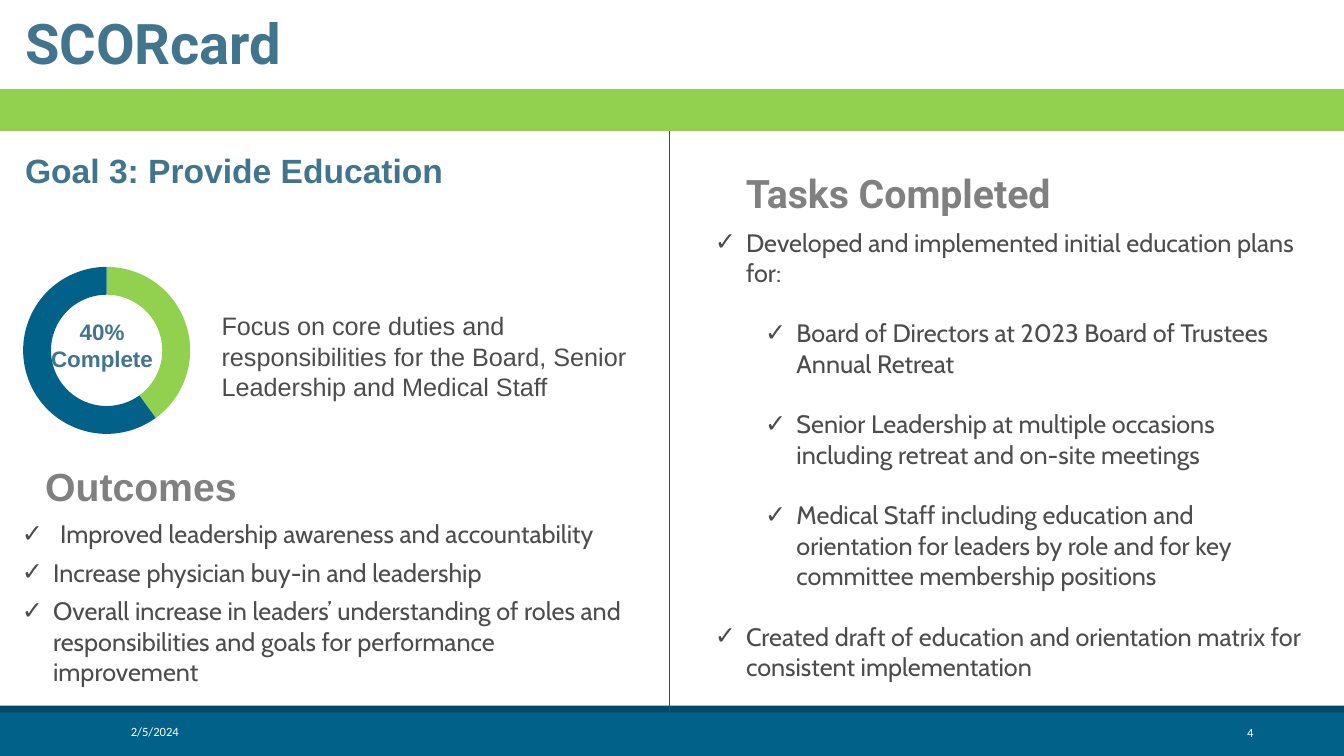
from lxml.etree import SubElement
from pptx import Presentation
from pptx.chart.data import CategoryChartData
from pptx.dml.color import RGBColor
from pptx.enum.chart import XL_CHART_TYPE
from pptx.enum.shapes import MSO_CONNECTOR, MSO_SHAPE
from pptx.enum.text import MSO_ANCHOR, MSO_AUTO_SIZE, PP_ALIGN
from pptx.oxml import parse_xml
from pptx.oxml.ns import nsdecls, qn
from pptx.util import Inches, Pt

COLOURS = {
    "white": "FFFFFF", "blue": "016188", "navy": "014A67", "green": "92D050",
    "steel": "41748D", "grey": "808080", "text": "4C4C4C",
    "slice 1": "767676", "slice 2": "BABABA", "slice 3": "969696", "slice 4": "535353",
}
COLUMNS, ROWS = 160, 90
INDENT = 0.31


def colour(name):
    return RGBColor.from_string(COLOURS[name])


class Board:
    """Holds the grid, the style and the current slide."""

    def __init__(self, deck, layout):
        self.column = deck.slide_width / COLUMNS
        self.row = deck.slide_height / ROWS
        self.page = deck.slides.add_slide(deck.slide_layouts[layout])
        self.shapes = self.page.shapes

    def cell(self, left, top, width, height):
        return (round(left * self.column), round(top * self.row),
                round(width * self.column), round(height * self.row))

    def place(self, holder, area):
        holder.left, holder.top, holder.width, holder.height = self.cell(*area)

    def style(self, para, font, size, shade, bold=False):
        for span in para.runs:
            span.font.name, span.font.size, span.font.bold = font, Pt(size), bold
            span.font.color.rgb = colour(shade)

    def bar(self, top, height, shade):
        bar = self.shapes.add_shape(MSO_SHAPE.RECTANGLE, *self.cell(0, top, COLUMNS, height))
        bar.shadow.inherit = False
        bar.fill.solid()
        bar.fill.fore_color.rgb = colour(shade)
        bar.line.fill.background()

    def fill_text(self, box, words, font, size, shade, bold=False,
                  align=PP_ALIGN.LEFT, anchor=MSO_ANCHOR.TOP):
        frame = box.text_frame
        frame.word_wrap, frame.auto_size = True, MSO_AUTO_SIZE.NONE
        frame.vertical_anchor = anchor
        frame.text = words
        for para in frame.paragraphs:
            para.alignment = align
            self.style(para, font, size, shade, bold)

    def text(self, area, words, *look, **options):
        self.fill_text(self.shapes.add_textbox(*self.cell(*area)), words, *look, **options)

    def title(self, area, words, *look, **options):
        self.place(self.shapes.title, area)
        self.fill_text(self.shapes.title, words, *look, **options)

    def checklist(self, index, area, items):
        """Each item is (words, level, hanging inches, points before)."""
        holder = self.page.placeholders[index]
        self.place(holder, area)
        self.fill_text(holder, "\n".join(item[0] for item in items), "Cabin", 18, "text")
        for para, (_, level, hanging, before) in zip(holder.text_frame.paragraphs, items):
            para.level = level
            para.space_before, para.space_after = Pt(before), Pt(0)
            properties = para._p.get_or_add_pPr()
            properties.set("marL", str(Inches(level * 0.5 + hanging)))
            properties.set("indent", str(-Inches(hanging)))
            SubElement(properties, qn("a:buFont")).set("typeface", "Arial")
            SubElement(properties, qn("a:buChar")).set("char", "✓")

    def doughnut(self, area, series, plot):
        data = CategoryChartData()
        data.categories = ["1", "2", "3", "4"]
        for name, values, _ in series:
            data.add_series(name, values)
        chart = self.shapes.add_chart(XL_CHART_TYPE.DOUGHNUT, *self.cell(*area), data).chart
        chart.has_legend = chart.has_title = False
        chart.font.name, chart.font.size = "Calibri", Pt(10)
        chart.font.color.rgb = colour("text")
        chart.plots[0].vary_by_categories = True
        for ring, (_, _, shades) in zip(chart.plots[0].series, series):
            for index, shade in enumerate(shades):
                look = ring.points[index].format
                look.fill.solid()
                look.fill.fore_color.rgb = colour(shade)
                look.line.fill.background()
        # Fixed place of the ring inside the chart
        plot_area = chart._chartSpace.chart.plotArea
        for layout in plot_area.findall(qn("c:layout")):
            plot_area.remove(layout)
        sides = "".join(f'<c:{key} val="{share}"/>' for key, share in zip("xywh", plot))
        plot_area.insert(0, parse_xml(
            f'<c:layout {nsdecls("c")}><c:manualLayout><c:layoutTarget val="inner"/>'
            f'<c:xMode val="edge"/><c:yMode val="edge"/>{sides}</c:manualLayout></c:layout>'))

    def divider(self, column, top, bottom):
        left, start, _, height = self.cell(column, top, 0, bottom - top)
        line = self.shapes.add_connector(MSO_CONNECTOR.STRAIGHT, left, start + height, left, start)
        line.line.color.rgb, line.line.width = colour("blue"), Pt(1)
        SubElement(line._element.spPr, qn("a:effectLst"))


def main():
    deck = Presentation()
    deck.slide_width, deck.slide_height = Inches(13.333), Inches(7.5)
    board = Board(deck, 3)

    # Header and footer bands
    board.bar(84.7, 5.3, "blue")
    board.bar(84, 0.8, "navy")
    board.bar(10.6, 5, "green")
    board.text((14.4, 84.7, 32.4, 4.8), "2/5/2024", "Calibri", 9, "white",
               anchor=MSO_ANCHOR.MIDDLE)
    board.text((126.2, 85.7, 24.2, 3), "4", "Calibri", 9, "white",
               align=PP_ALIGN.RIGHT, anchor=MSO_ANCHOR.MIDDLE)

    # Titles and headings
    board.title((1.8, 0.4, 60, 9.2), "SCORcard", "Roboto", 40, "steel", True)
    board.text((1.8, 17.2, 67.7, 6), "Goal 3: Provide Education", "Arial", 24, "steel", True)
    board.text((4.2, 54.5, 62.2, 6.8), "Outcomes", "Arial", 28, "grey", True)
    board.text((87.6, 19.6, 50, 6.8), "Tasks Completed", "Roboto", 28, "grey", True)

    # Progress ring and focus
    others = ["slice 3", "slice 4"]
    board.doughnut((1.4, 29.3, 22.6, 23), [
        ("Series 1", (0, 0, None, None), ["slice 1", "slice 2"] + others),
        ("Series 2", (40, 60, None, None), ["green", "blue"] + others),
    ], (0.06, 0.1, 0.88, 0.92))
    board.text((3.2, 37.2, 17.9, 7.7), "40%\nComplete", "Arial", 16, "steel", True,
               align=PP_ALIGN.CENTER, anchor=MSO_ANCHOR.MIDDLE)
    board.text((25.2, 36.4, 51.6, 12.1),
               "Focus on core duties and responsibilities for the Board, "
               "Senior Leadership and Medical Staff", "Arial", 18, "text")

    # Outcomes and tasks
    board.checklist(1, (1.4, 61.1, 74.8, 21.4), [
        ("Improved leadership awareness and accountability", 0, 0.38, 0),
        ("Increase physician buy-in and leadership", 0, INDENT, 6),
        ("Overall increase in leaders’ understanding of roles and responsibilities "
         "and goals for performance improvement", 0, INDENT, 6),
    ])
    gap = 21.8
    board.checklist(2, (83.9, 26.4, 72.6, 57), [
        ("Developed and implemented initial education plans for:", 0, INDENT, 0),
        ("Board of Directors at 2023 Board of Trustees Annual Retreat", 1, INDENT, gap),
        ("Senior Leadership at multiple occasions including retreat and on-site meetings",
         1, INDENT, gap),
        ("Medical Staff including education and orientation for leaders by role "
         "and for key committee membership positions", 1, INDENT, gap),
        ("Created draft of education and orientation matrix for consistent implementation",
         0, INDENT, gap),
    ])
    board.divider(79.7, 15.6, 84.7)

    deck.save("out.pptx")


if __name__ == "__main__":
    main()
